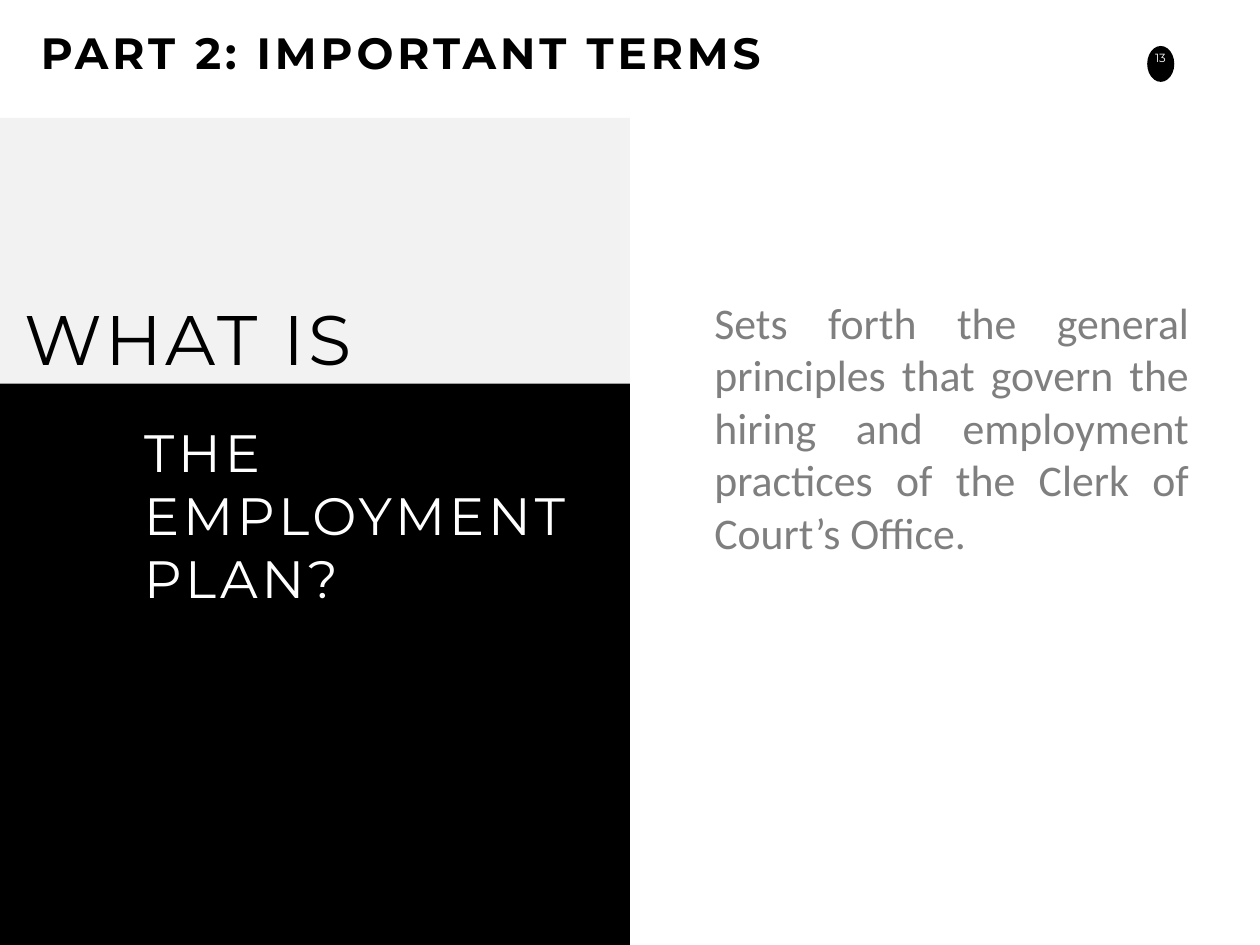
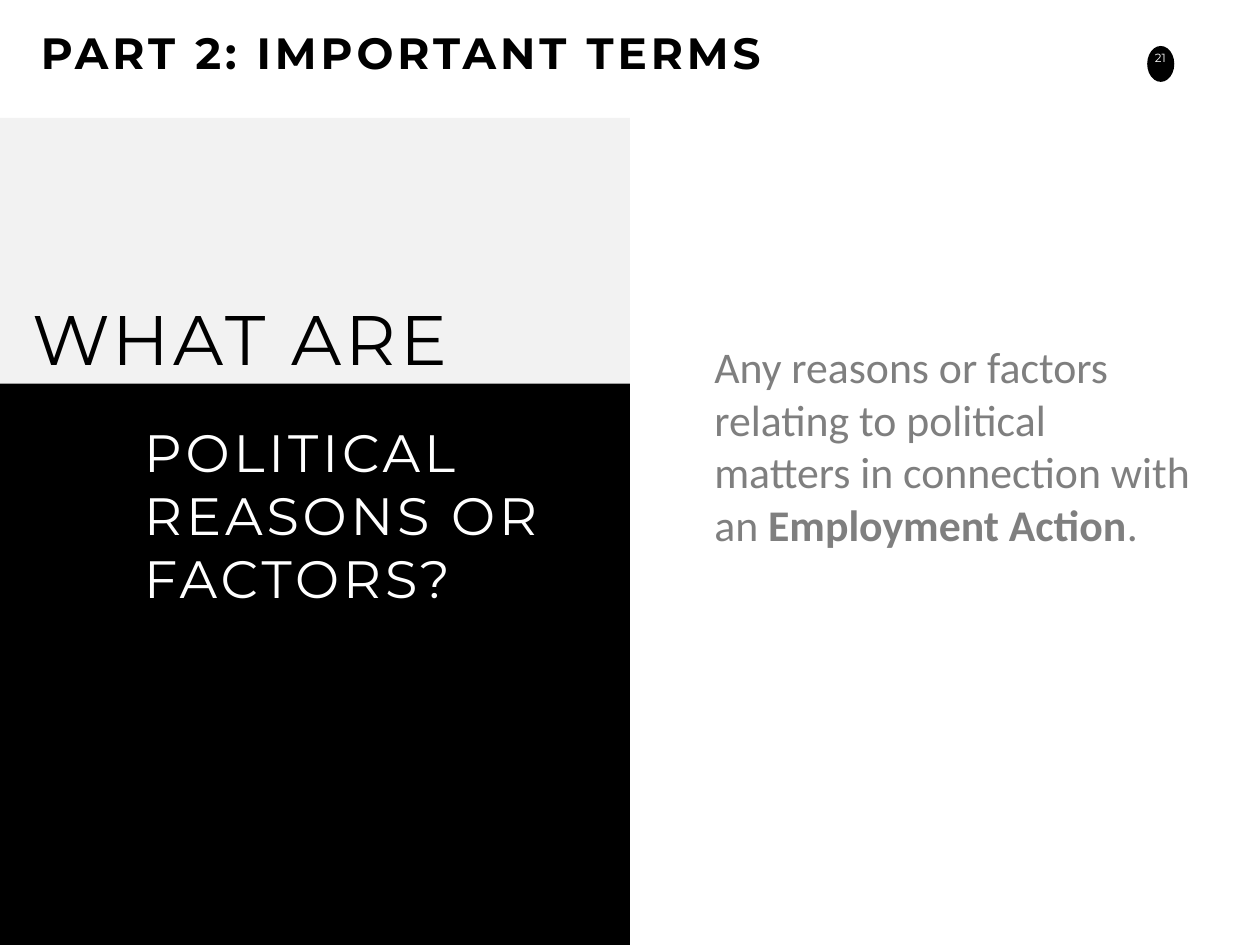
from dataclasses import dataclass

from pptx import Presentation
from pptx.dml.color import RGBColor
from pptx.enum import shapes, text
from pptx.util import Inches, Pt

ALIGN = text.PP_ALIGN


@dataclass(frozen=True)
class Theme:
    black: str = "000000"
    white: str = "FFFFFF"
    pale: str = "F2F2F2"
    grey: str = "7F7F7F"
    heading_font: str = "Montserrat"
    body_font: str = "Calibri"
    question_size: float = 80
    term_size: float = 60
    title_size: float = 50
    body_size: float = 50
    number_size: float = 13.5
    tracking: float = 4.5


class Deck:
    title_text = "PART 2: IMPORTANT TERMS"

    def __init__(self, theme):
        self.theme = theme
        self.prs = Presentation()
        self.prs.slide_width, self.prs.slide_height = Inches(20), Inches(15)
        self.slide = None

    def add_slide(self, number):
        """Start a slide with the shared title, page number and panels."""
        t = self.theme
        self.slide = self.prs.slides.add_slide(self.prs.slide_layouts[5])
        self.panel(shapes.MSO_SHAPE.OVAL, (18.21, 0.73, 0.43, 0.57), t.black)
        self.text_box((18.09, 0.73, 0.66, 0.38), [(number, False)],
                      t.number_size, t.white, align=ALIGN.CENTER,
                      insets=(0.15, 0.08), wrap=False)
        self.panel(shapes.MSO_SHAPE.RECTANGLE, (0, 1.87, 10, 4.22), t.pale)
        self.panel(shapes.MSO_SHAPE.RECTANGLE, (0, 6.09, 10, 8.91), t.black)
        title = self.slide.shapes.title
        title.left, title.top, title.width, title.height = map(
            Inches, (0.55, 0.36, 17.61, 0.94))
        self.fill_frame(title.text_frame, [(self.title_text, False)],
                        t.title_size, t.black, bold=True, tracking=t.tracking)

    def panel(self, kind, box, color):
        shape = self.slide.shapes.add_shape(kind, *map(Inches, box))
        shape.shadow.inherit = False
        shape.fill.solid()
        shape.fill.fore_color.rgb = RGBColor.from_string(color)
        shape.line.fill.background()

    def text_box(self, box, runs, size, color, **style):
        frame = self.slide.shapes.add_textbox(*map(Inches, box)).text_frame
        self.fill_frame(frame, runs, size, color, **style)

    def fill_frame(self, frame, runs, size, color, font=None, bold=False,
                   align=ALIGN.LEFT, tracking=0, insets=(0.1, 0.05),
                   wrap=True):
        """Fill a frame with one paragraph of (wording, emphasised) runs."""
        frame.word_wrap = wrap
        frame.auto_size = text.MSO_AUTO_SIZE.SHAPE_TO_FIT_TEXT
        frame.vertical_anchor = text.MSO_ANCHOR.TOP
        frame.margin_left = frame.margin_right = Inches(insets[0])
        frame.margin_top = frame.margin_bottom = Inches(insets[1])
        paragraph = frame.paragraphs[0]
        paragraph.alignment = align
        paragraph.font.name = font or self.theme.heading_font
        paragraph.font.size = Pt(size)
        paragraph.font.bold = bold
        paragraph.font.color.rgb = RGBColor.from_string(color)
        for wording, emphasised in runs:
            run = paragraph.add_run()
            run.text = wording
            if emphasised:
                run.font.bold = True
            if tracking:
                run._r.get_or_add_rPr().set("spc", str(round(tracking * 100)))

    def question(self, opening, width, term):
        t = self.theme
        self.text_box((0.26, 4.64, width, 1.45), [(opening, False)],
                      t.question_size, t.black, align=ALIGN.CENTER,
                      tracking=t.tracking)
        self.text_box((2.19, 6.61, 7.47, 3.13), [(term, False)],
                      t.term_size, t.white, tracking=t.tracking)

    def definition(self, top, width, runs, align=ALIGN.LEFT):
        t = self.theme
        self.text_box((11.24, top, width, 4.31), runs, t.body_size, t.grey,
                      font=t.body_font, align=align)


def main():
    deck = Deck(Theme())

    deck.add_slide("13")
    deck.question("WHAT IS", 5.46, "THE EMPLOYMENT PLAN?")
    deck.definition(4.64, 7.74, [
        ("Sets forth the general principles that govern the hiring and "
         "employment practices of the Clerk of Court’s Office.", False),
    ], ALIGN.JUSTIFY)

    deck.add_slide("21")
    deck.question("WHAT ARE", 7.09, "POLITICAL REASONS OR FACTORS?")
    deck.definition(5.35, 7.76, [
        ("Any reasons or factors relating to political matters in connection "
         "with an ", False),
        ("Employment Action", True),
        (".", False),
    ])

    deck.prs.save("out.pptx")


if __name__ == "__main__":
    main()
